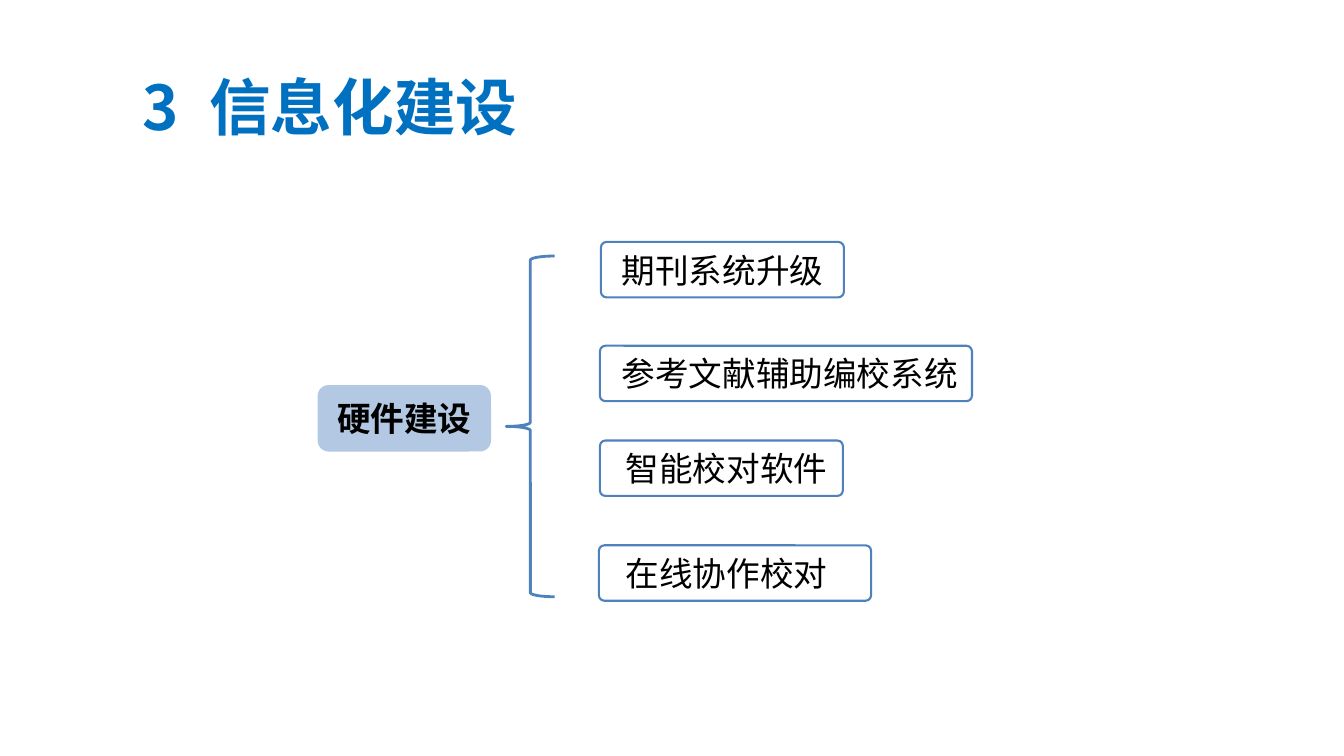
from lxml import etree
from pptx import Presentation
from pptx.dml.color import RGBColor
from pptx.enum.shapes import MSO_SHAPE
from pptx.enum.text import MSO_ANCHOR, PP_ALIGN
from pptx.oxml.ns import qn
from pptx.util import Inches, Pt

ROUND, BRACE = MSO_SHAPE.ROUNDED_RECTANGLE, MSO_SHAPE.LEFT_BRACE
MIDDLE = MSO_ANCHOR.MIDDLE
LEFT, CENTER = PP_ALIGN.LEFT, PP_ALIGN.CENTER
COLORS = {"title": "0070C0", "line": "4F81BD", "white": "FFFFFF",
          "text": "000000", "shade": "808080"}
LATIN, ASIAN = "Arial", "Noto Sans CJK SC"


def color(name):
    return RGBColor.from_string(COLORS[name])


def write(para, text, size=24, bold=False, ink="text", font=LATIN, gap=0):
    """Add a run; gap is extra letter spacing in points."""
    run = para.add_run()
    run.text = text
    run.font.size, run.font.bold, run.font.name = Pt(size), bold, font
    run.font.color.rgb = color(ink)
    props = run.font._element
    props.find(qn("a:latin")).addnext(
        etree.Element(qn("a:ea"), typeface=ASIAN))
    if gap:
        props.set("spc", str(gap * 100))
    return run


def shade(run):
    """Give a run a soft grey text shadow."""
    effects = etree.Element(qn("a:effectLst"))
    cast = etree.SubElement(effects, qn("a:outerShdw"),
                            dist="38100", dir="2700000")
    etree.SubElement(cast, qn("a:srgbClr"), val=COLORS["shade"])
    run.font._element.find(qn("a:solidFill")).addnext(effects)


class Deck:
    def __init__(self):
        self.prs = Presentation()
        self.prs.slide_width, self.prs.slide_height = Inches(13.33), Inches(7.5)
        self.slide = self.prs.slides.add_slide(self.prs.slide_layouts[5])

    def title(self, parts, x, y, w, h):
        box = self.slide.shapes.title
        box.left, box.top, box.width, box.height = map(Inches, (x, y, w, h))
        box.text_frame.vertical_anchor = MIDDLE
        para = box.text_frame.paragraphs[0]
        para.alignment = LEFT
        for text, gap in parts:
            shade(write(para, text, 44, True, "title", ASIAN, gap))

    def shape(self, kind, x, y, w, h, line=None, fill=None, alpha=100):
        item = self.slide.shapes.add_shape(kind, *map(Inches, (x, y, w, h)))
        item.shadow.inherit = False
        if line:
            item.line.color.rgb, item.line.width = color("line"), Pt(line)
        else:
            item.line.fill.background()
        if fill:
            item.fill.solid()
            item.fill.fore_color.rgb = color(fill)
            tint = item._element.spPr.find(qn("a:solidFill"))[0]
            etree.SubElement(tint, qn("a:alpha"), val=str(alpha * 1000))
        else:
            item.fill.background()
        return item

    def label(self, item, text, inset=0, align=LEFT, bold=False):
        frame = item.text_frame
        frame.word_wrap, frame.vertical_anchor = True, MIDDLE
        frame.margin_left, frame.margin_right = Inches(inset), 0
        frame.margin_top = frame.margin_bottom = 0
        frame.paragraphs[0].alignment = align
        write(frame.paragraphs[0], text, bold=bold)


def main():
    deck = Deck()
    deck.title([("3 ", 6), ("信息化建设", 0)], 1.31, 0.63, 8.13, 0.85)

    # Branches: text, left, top, width, indent
    rows = [("期刊系统升级", 5.96, 2.4, 2.41, 0.19),
            ("参考文献辅助编校系统", 5.95, 3.43, 3.69, 0.2),
            ("智能校对软件", 5.95, 4.37, 2.41, 0.24),
            ("在线协作校对", 5.94, 5.41, 2.7, 0.25)]
    for text, x, y, w, inset in rows:
        box = deck.shape(ROUND, x, y, w, 0.55, 1.5, "white", 90)
        box.adjustments[0] = 0.1
        deck.label(box, text, inset)

    # Brace and root
    deck.shape(BRACE, 5.02, 2.54, 0.48, 3.38, line=2)
    root = deck.shape(ROUND, 3.15, 3.82, 1.72, 0.66, fill="line", alpha=43)
    deck.label(root, "硬件建设", align=CENTER, bold=True)

    deck.prs.save("out.pptx")


if __name__ == "__main__":
    main()
